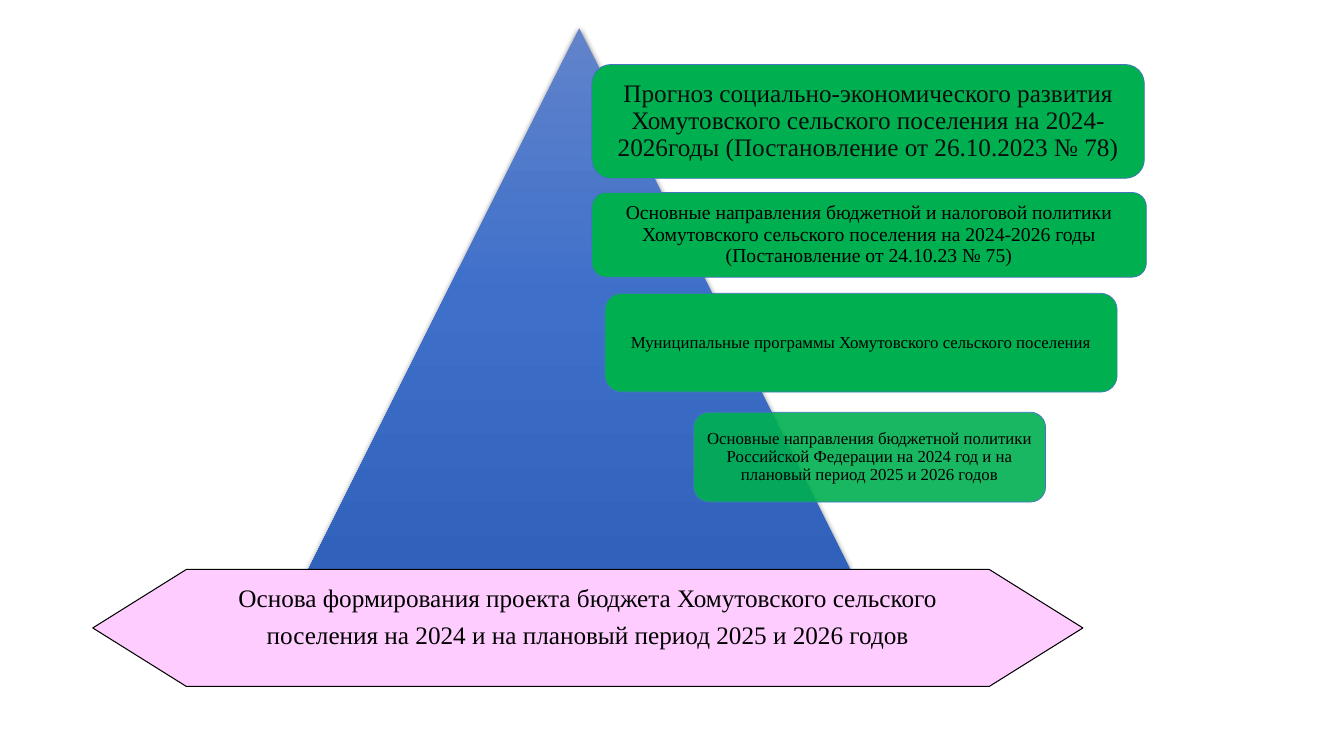
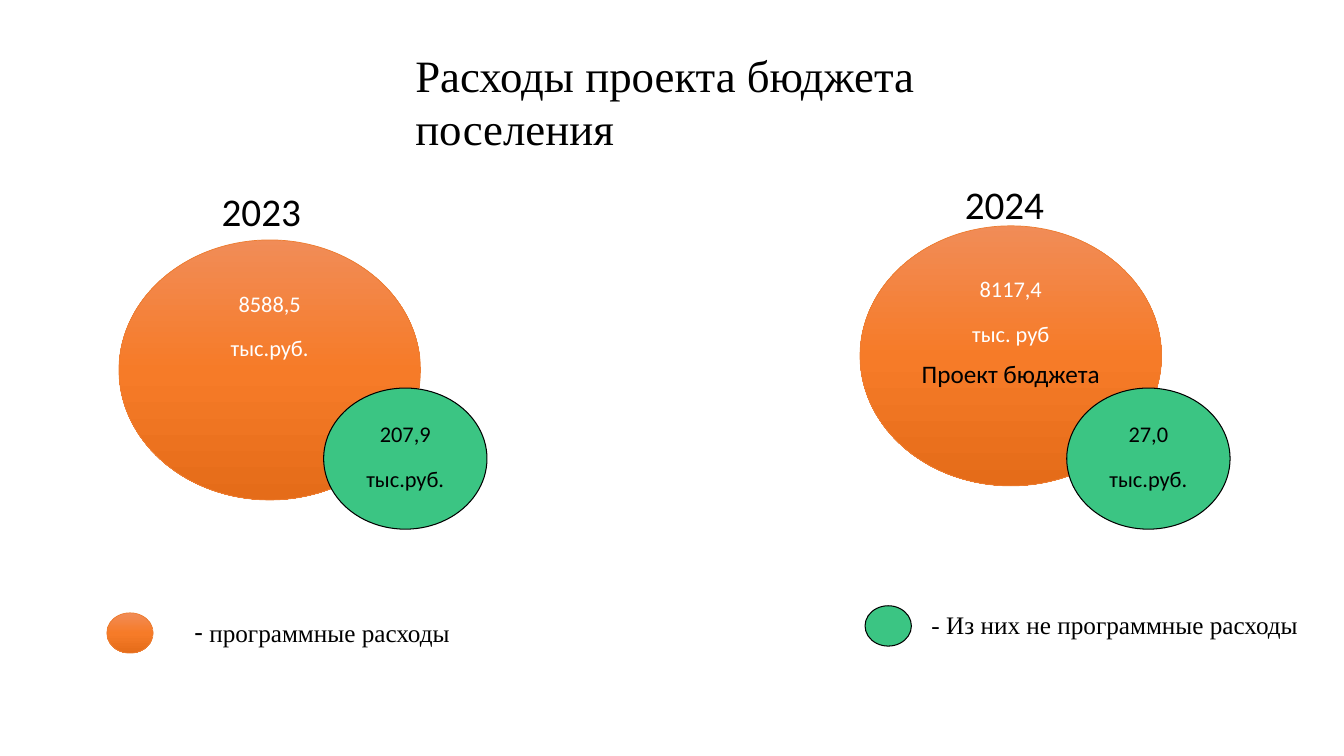
from dataclasses import dataclass

from lxml.etree import SubElement
from pptx import Presentation
from pptx.dml.color import RGBColor
from pptx.enum.shapes import MSO_SHAPE
from pptx.enum.text import MSO_ANCHOR, PP_ALIGN
from pptx.oxml.ns import qn
from pptx.util import Pt

PX = 9144


@dataclass(frozen=True)
class Theme:
    serif: str = "Times New Roman"
    sans: str = "Calibri"
    black: str = "000000"
    ink: str = "0D0D0D"
    white: str = "FFFFFF"
    card: str = "00B050"
    card_line: str = "4472C4"
    banner: str = "FFCCFF"
    green: str = "3BC583"
    orange_line: str = "ED7D31"
    blue: tuple = ("6183CB", "3E70CA", "3062BB")
    orange: tuple = ("F18C57", "F67B28", "E56C19")
    title: int = 32
    year: int = 28
    dash: int = 20
    body: int = 18
    value: int = 16
    medium: int = 14
    small: int = 12


T = Theme()
LOOSE = dict(spacing=1.25, after=8)
CENTER = dict(align=PP_ALIGN.CENTER, **LOOSE)


def add(s, kind, at, fill=None, line=None, width=0.75):
    box = [v * PX for v in at]
    if kind is None:
        sp = s.shapes.add_textbox(*box)
    else:
        sp = s.shapes.add_shape(kind, *box)
        sp.shadow.inherit = False
        if isinstance(fill, tuple):
            sp.fill.gradient()
            sp.fill.gradient_angle = 270
            stops = sp._element.spPr.find(qn("a:gradFill")).find(qn("a:gsLst"))
            for stop in list(stops):
                stops.remove(stop)
            for i, color in enumerate(fill):
                stop = SubElement(stops, qn("a:gs"), pos=str(i * 50000))
                SubElement(stop, qn("a:srgbClr"), val=color)
        else:
            sp.fill.solid()
            sp.fill.fore_color.rgb = RGBColor.from_string(fill)
        if line:
            sp.line.color.rgb = RGBColor.from_string(line)
            sp.line.width = Pt(width)
        else:
            sp.line.fill.background()
    sp.text_frame.word_wrap = True
    sp.text_frame.vertical_anchor = MSO_ANCHOR.TOP
    return sp


def put(tf, text, size=T.body, font=T.serif, color=T.black,
        align=PP_ALIGN.LEFT, spacing=1.0, after=0, run_on=False):
    p = tf.paragraphs[-1]
    if p.runs and not run_on:
        p = tf.add_paragraph()
    p.alignment = align
    p.line_spacing = spacing
    p.space_after = Pt(after)
    r = p.add_run()
    r.text = text
    r.font.size = Pt(size)
    r.font.name = font
    r.font.color.rgb = RGBColor.from_string(color)


prs = Presentation()
prs.slide_width = 1333 * PX
prs.slide_height = 750 * PX
blank = prs.slide_layouts[6]

s = prs.slides.add_slide(blank)
pyramid = add(s, MSO_SHAPE.ISOSCELES_TRIANGLE, (306, 28, 537, 537), T.blue)
effects = pyramid._element.spPr.find(qn("a:effectLst"))
shadow = SubElement(effects, qn("a:outerShdw"), blurRad="57150", dist="19050",
                    dir="5400000", algn="ctr", rotWithShape="0")
shade = SubElement(shadow, qn("a:srgbClr"), val=T.black)
SubElement(shade, qn("a:alpha"), val="63000")

cards = [
    ((587, 64, 548, 113), 7, T.body, T.ink,
     "Прогноз социально-экономического развития Хомутовского сельского "
     "поселения на 2024-2026годы (Постановление от 26.10.2023 № 78)"),
    ((587, 191, 550, 84), 6, T.medium, T.black,
     "Основные направления бюджетной и налоговой политики Хомутовского "
     "сельского поселения на 2024-2026 годы (Постановление от 24.10.23 № 75)"),
    ((600, 291, 508, 98), 5, T.small, T.black,
     "Муниципальные программы Хомутовского сельского поселения"),
    ((688, 409, 349, 89), 5, T.small, T.black,
     "Основные направления бюджетной политики Российской Федерации "
     "на 2024 год и на плановый период 2025 и 2026 годов"),
]
for at, inset, size, color, text in cards:
    sp = add(s, MSO_SHAPE.ROUNDED_RECTANGLE, at, T.card, T.card_line, 0.5)
    tf = sp.text_frame
    tf.vertical_anchor = MSO_ANCHOR.MIDDLE
    tf.margin_left = tf.margin_right = inset * PX
    tf.margin_top = tf.margin_bottom = inset * PX
    put(tf, text, size=size, color=color, align=PP_ALIGN.CENTER, spacing=0.9)
tint = sp._element.spPr.find(qn("a:solidFill")).find(qn("a:srgbClr"))
SubElement(tint, qn("a:alpha"), val="90000")

banner = add(s, MSO_SHAPE.LEFT_RIGHT_ARROW, (92, 565, 982, 116), T.banner, T.black)
banner.adjustments[0] = 1
banner.adjustments[1] = 0.8
put(banner.text_frame,
    "Основа формирования проекта бюджета Хомутовского сельского поселения "
    "на 2024 и на плановый период 2025 и 2026 годов", **CENTER)

s = prs.slides.add_slide(blank)
title = add(s, None, (402, 42, 601, 118))
put(title.text_frame, "Расходы проекта бюджета поселения", size=T.title)

DISC = MSO_SHAPE.FLOWCHART_CONNECTOR
years = [
    ("2023", (210, 169, 116, 56), (118, 238), ("8588,5", "тыс.руб."), 321, "207,9"),
    ("2024", (947, 162, 111, 56), (853, 224), ("8117,4", "тыс. руб"), 1058, "27,0"),
]
for year, year_at, total_at, total, part_x, part in years:
    discs = [
        (total_at + (299, 258), T.orange, T.orange_line, 0.5, T.white, total),
        ((part_x, 385, 162, 140), T.green, T.black, 0.75, T.black, (part, "тыс.руб.")),
    ]
    for at, fill, line, width, color, lines in discs:
        sp = add(s, DISC, at, fill, line, width)
        for text in lines:
            put(sp.text_frame, text, size=T.value, font=T.sans, color=color, **CENTER)
    label = add(s, MSO_SHAPE.RECTANGLE, year_at, T.white)
    put(label.text_frame, year, size=T.year, font=T.sans, **LOOSE)

add(s, DISC, (106, 608, 46, 40), T.orange, T.orange_line, 0.5)
add(s, DISC, (858, 601, 46, 40), T.green, T.black)

program = add(s, None, (183, 605, 276, 44)).text_frame
program.word_wrap = False
put(program, "- ", size=T.dash, font=T.sans)
put(program, "программные расходы", run_on=True)

other = add(s, None, (914, 600, 387, 40)).text_frame
other.word_wrap = False
put(other, "- Из них не программные расходы")

draft = add(s, None, (903, 343, 199, 48)).text_frame
draft.word_wrap = False
put(draft, "Проект бюджета", font=T.sans, **CENTER)

prs.save("out.pptx")
